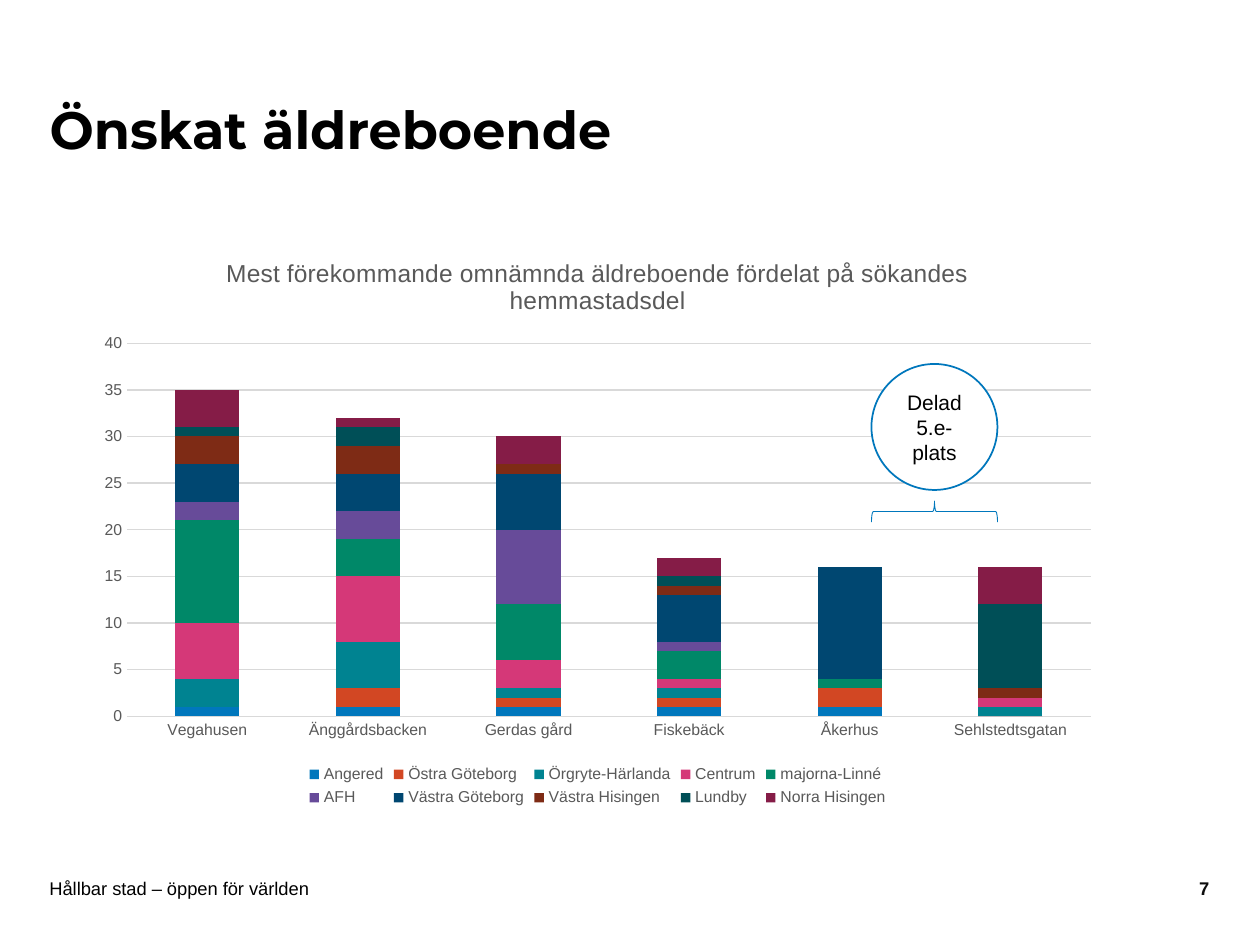
"""Build a slide with a stacked column chart of requested care homes."""
from pptx import Presentation
from pptx.chart.data import CategoryChartData
from pptx.dml.color import RGBColor
from pptx.enum.chart import XL_CHART_TYPE, XL_LEGEND_POSITION, XL_TICK_MARK
from pptx.enum.shapes import MSO_SHAPE
from pptx.enum.text import MSO_ANCHOR, MSO_AUTO_SIZE, PP_ALIGN
from pptx.util import Pt

STACK = XL_CHART_TYPE.COLUMN_STACKED
BOTTOM = XL_LEGEND_POSITION.BOTTOM
NO_TICK = XL_TICK_MARK.NONE
BRACE, OVAL = MSO_SHAPE.LEFT_BRACE, MSO_SHAPE.OVAL
MIDDLE = MSO_ANCHOR.MIDDLE
NO_FIT = MSO_AUTO_SIZE.NONE
LEFT, CENTER, RIGHT = PP_ALIGN.LEFT, PP_ALIGN.CENTER, PP_ALIGN.RIGHT

BLACK = RGBColor(0x00, 0x00, 0x00)
INK = RGBColor(0x0D, 0x0D, 0x0D)
WHITE = RGBColor(0xFF, 0xFF, 0xFF)
GRAY = RGBColor(0x59, 0x59, 0x59)
PALE = RGBColor(0xD9, 0xD9, 0xD9)
BLUE = RGBColor(0x00, 0x77, 0xBC)
ORANGE = RGBColor(0xD2, 0x47, 0x23)
TEAL = RGBColor(0x00, 0x83, 0x91)
PINK = RGBColor(0xD5, 0x38, 0x78)
GREEN = RGBColor(0x00, 0x88, 0x68)
PURPLE = RGBColor(0x67, 0x4B, 0x99)
NAVY = RGBColor(0x00, 0x47, 0x71)
BROWN = RGBColor(0x7E, 0x2B, 0x15)
PINE = RGBColor(0x00, 0x4F, 0x57)
WINE = RGBColor(0x85, 0x1C, 0x47)

HOMES = ["Vegahusen", "Änggårdsbacken", "Gerdas gård", "Fiskebäck", "Åkerhus",
         "Sehlstedtsgatan"]
AREAS = [
    ("Angered", BLUE, (1, 1, 1, 1, 1, 0)),
    ("Östra Göteborg", ORANGE, (0, 2, 1, 1, 2, 0)),
    ("Örgryte-Härlanda", TEAL, (3, 5, 1, 1, 0, 1)),
    ("Centrum", PINK, (6, 7, 3, 1, 0, 1)),
    ("majorna-Linné", GREEN, (11, 4, 6, 3, 1, 0)),
    ("AFH", PURPLE, (2, 3, 8, 1, 0, 0)),
    ("Västra Göteborg", NAVY, (4, 4, 6, 5, 12, 0)),
    ("Västra Hisingen", BROWN, (3, 3, 1, 1, 0, 1)),
    ("Lundby", PINE, (1, 2, 0, 1, 0, 9)),
    ("Norra Hisingen", WINE, (4, 1, 3, 2, 0, 4)),
]


class Deck:
    """Hold the style and the current slide."""

    body, head = "Arial", "Montserrat"

    def __init__(self, show):
        self.slide = show.slides.add_slide(show.slide_layouts[5])

    def font(self, font, size, color, bold=False, name=None):
        font.name, font.size, font.bold = name or self.body, Pt(size), bold
        font.color.rgb = color

    def fill(self, frame, text, size, color, align, bold=False, name=None):
        frame.word_wrap = True
        frame.auto_size = NO_FIT
        frame.vertical_anchor = MIDDLE
        para = frame.paragraphs[0]
        para.text, para.alignment = text, align
        self.font(para.font, size, color, bold, name)
        return para

    def title(self, text, x, y, w, h):
        box = self.slide.shapes.title
        box.left, box.top, box.width, box.height = map(Pt, (x, y, w, h))
        para = self.fill(box.text_frame, text, 30, BLACK, LEFT, True, self.head)
        para.line_spacing = 0.9
        box.text_frame.margin_left = box.text_frame.margin_right = 0

    def text(self, text, x, y, w, h, color, align=LEFT, bold=False):
        box = self.slide.shapes.add_textbox(*map(Pt, (x, y, w, h)))
        frame = box.text_frame
        frame.margin_left = frame.margin_right = 0
        frame.margin_top = frame.margin_bottom = 0
        self.fill(frame, text, 10.5, color, align, bold)

    def shape(self, kind, x, y, w, h, line, turn=0):
        item = self.slide.shapes.add_shape(kind, *map(Pt, (x, y, w, h)))
        item.shadow.inherit = False
        item.rotation = turn
        item.fill.background()
        item.line.color.rgb = BLUE
        item.line.width = Pt(line)
        return item

    def badge(self, text, x, y, size):
        item = self.shape(OVAL, x, y, size, size, 1)
        item.fill.solid()
        item.fill.fore_color.rgb = WHITE
        self.fill(item.text_frame, text, 12, BLACK, CENTER)

    def rule(self, line):
        line.color.rgb = PALE
        line.width = Pt(0.75)

    def chart(self, title, cats, rows, x, y, w, h):
        data = CategoryChartData()
        data.categories = cats
        for name, _, vals in rows:
            data.add_series(name, vals)
        place = map(Pt, (x, y, w, h))
        chart = self.slide.shapes.add_chart(STACK, *place, data).chart
        self.font(chart.font, 10, BLACK)
        chart.has_title = True
        chart.chart_title.include_in_layout = False
        para = chart.chart_title.text_frame.paragraphs[0]
        para.text = title
        self.font(para.font, 14, GRAY)
        chart.has_legend = True
        chart.legend.position = BOTTOM
        chart.legend.include_in_layout = False
        self.font(chart.legend.font, 9, GRAY)
        for axis in (chart.category_axis, chart.value_axis):
            axis.major_tick_mark = axis.minor_tick_mark = NO_TICK
            self.font(axis.tick_labels.font, 9, GRAY)
        self.rule(chart.category_axis.format.line)
        axis = chart.value_axis
        axis.minimum_scale, axis.maximum_scale, axis.major_unit = 0, 40, 5
        axis.format.line.fill.background()
        self.rule(axis.major_gridlines.format.line)
        plot = chart.plots[0]
        plot.gap_width, plot.overlap = 150, 100
        plot.vary_by_categories = False
        for bar, (_, color, _) in zip(plot.series, rows):
            bar.invert_if_negative = False
            bar.format.fill.solid()
            bar.format.fill.fore_color.rgb = color


def main():
    show = Presentation()
    show.slide_width, show.slide_height = Pt(720), Pt(540)
    deck = Deck(show)
    deck.text("Hållbar stad – öppen för världen", 28.3, 502, 510, 11.5, BLACK)
    deck.title("Önskat äldreboende", 28.3, 30, 541.5, 91)
    deck.text("7", 657.5, 502, 33.5, 11.5, INK, RIGHT, True)
    deck.chart("Mest förekommande omnämnda äldreboende fördelat på sökandes "
               "hemmastadsdel", HOMES, AREAS, 48, 134, 587, 330)
    deck.shape(BRACE, 528, 256.3, 12, 72, 0.5, 90)
    deck.badge("Delad 5.e-plats", 498, 208, 72)
    show.save("out.pptx")


if __name__ == "__main__":
    main()
